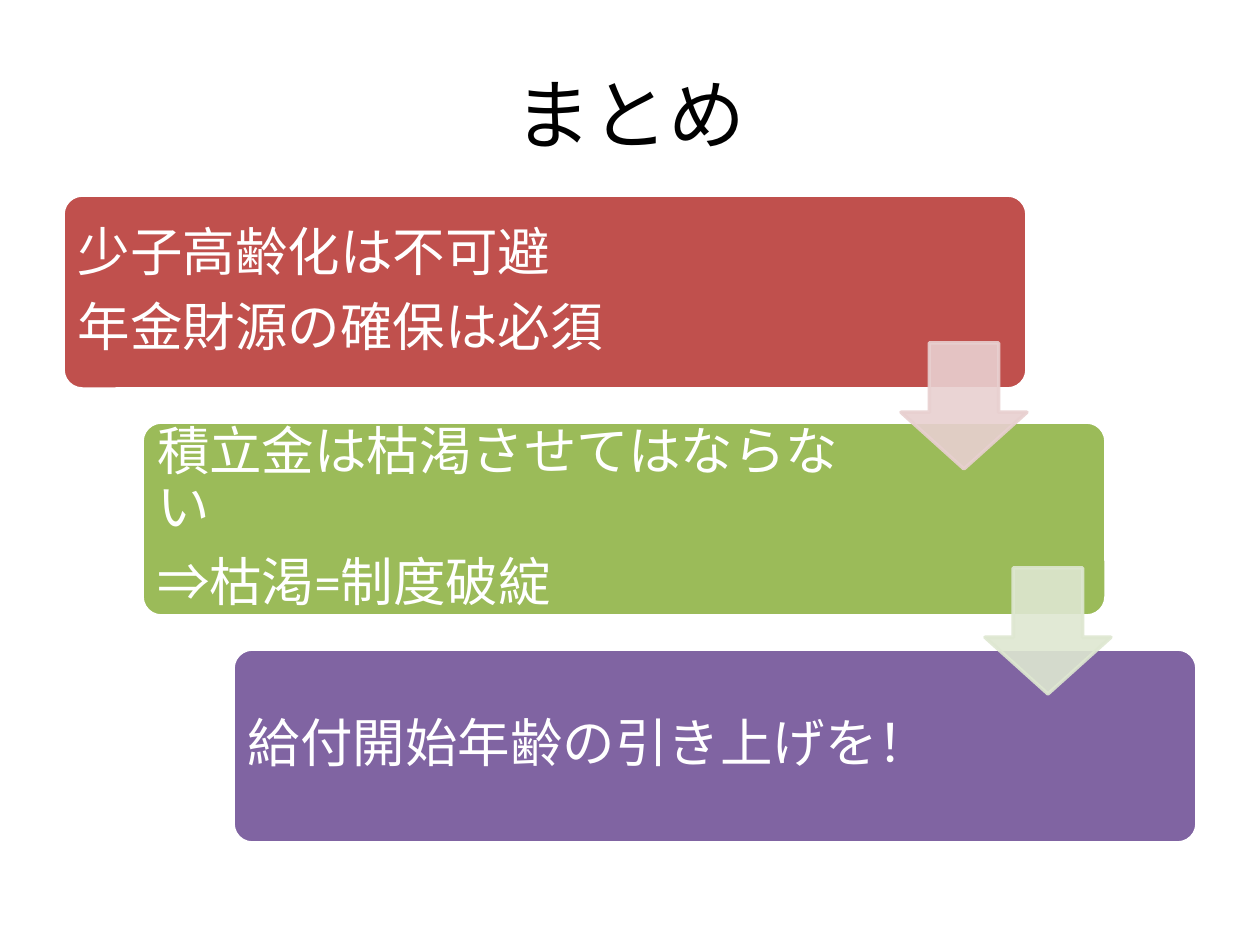
from pptx import Presentation, util as u
from pptx.dml.color import RGBColor
from pptx.enum import shapes, text
from pptx.oxml.ns import qn
from lxml import etree

PX_PER_INCH = 126
BLACK = RGBColor(0x00, 0x00, 0x00)
WHITE = RGBColor(0xFF, 0xFF, 0xFF)
RED = RGBColor(0xC0, 0x50, 0x4D)
GREEN = RGBColor(0x9B, 0xBB, 0x59)
PURPLE = RGBColor(0x80, 0x64, 0xA2)
PALE_RED = RGBColor(0xE8, 0xD0, 0xD0)
PALE_GREEN = RGBColor(0xDE, 0xE7, 0xD1)

CARD_WIDTH, CARD_HEIGHT = 964, 194
CARD_TOP, CARD_PITCH = 195, 227
ARROW_SIZE = 126

STEPS = [
    (63, 765, RED, ["少子高齢化は不可避", "年金財源の確保は必須"]),
    (142, 752, GREEN, ["積立金は枯渇させてはならない", "⇒枯渇=制度破綻"]),
    (233, 752, PURPLE, ["給付開始年齢の引き上げを！"]),
]
ARROWS = [(901, 343, PALE_RED), (985, 568, PALE_GREEN)]


def px(length):
    return u.Emu(round(length * u.Inches(1) / PX_PER_INCH))


def write(frame, lines, size, color, align=text.PP_ALIGN.LEFT, spacing=1.0, after=0):
    for index, line in enumerate(lines):
        paragraph = frame.add_paragraph() if index else frame.paragraphs[0]
        paragraph.alignment = align
        paragraph.line_spacing = spacing
        paragraph.space_after = u.Pt(after)
        run = paragraph.add_run()
        run.text = line
        run.font.name = "Calibri"
        run.font.size = u.Pt(size)
        run.font.color.rgb = color


class Deck:
    line_width = 2
    inset = 15

    def __init__(self, width, height):
        self.presentation = Presentation()
        self.presentation.slide_width = px(width)
        self.presentation.slide_height = px(height)
        self.slide = self.presentation.slides.add_slide(self.presentation.slide_layouts[6])

    def label(self, left, top, width, height, lines, **style):
        box = self.slide.shapes.add_textbox(px(left), px(top), px(width), px(height))
        frame = box.text_frame
        frame.word_wrap = True
        frame.vertical_anchor = text.MSO_ANCHOR.MIDDLE
        frame.margin_left = frame.margin_right = px(self.inset)
        frame.margin_top = frame.margin_bottom = px(self.inset)
        write(frame, lines, **style)

    def block(self, kind, left, top, width, height, fill, line, adjustments):
        block = self.slide.shapes.add_shape(kind, px(left), px(top), px(width), px(height))
        block.shadow.inherit = False
        for index, value in enumerate(adjustments):
            block.adjustments[index] = value
        block.fill.solid()
        block.fill.fore_color.rgb = fill
        block.line.color.rgb = line
        block.line.width = u.Pt(self.line_width)
        return block

    def card(self, left, top, fill):
        self.block(shapes.MSO_SHAPE.ROUNDED_RECTANGLE, left, top,
                   CARD_WIDTH, CARD_HEIGHT, fill, WHITE, [0.1])

    def arrow(self, left, top, color, opacity=90):
        arrow = self.block(shapes.MSO_SHAPE.DOWN_ARROW, left, top,
                           ARROW_SIZE, ARROW_SIZE, color, color, [0.55, 0.45])
        for tint in arrow.element.spPr.iter(qn("a:srgbClr")):
            etree.SubElement(tint, qn("a:alpha")).set("val", str(opacity * 1000))

    def save(self):
        self.presentation.save("out.pptx")


def main():
    deck = Deck(1260, 945)
    deck.label(63, 34, 1134, 158, ["まとめ"], size=44, color=BLACK,
               align=text.PP_ALIGN.CENTER)
    for row, (left, text_width, fill, lines) in enumerate(STEPS):
        top = CARD_TOP + row * CARD_PITCH
        deck.card(left, top, fill)
        deck.label(left, top, text_width, CARD_HEIGHT, lines, size=30, color=WHITE,
                   spacing=0.9, after=10.5)
    for left, top, color in ARROWS:
        deck.arrow(left, top, color)
    deck.save()


if __name__ == "__main__":
    main()
